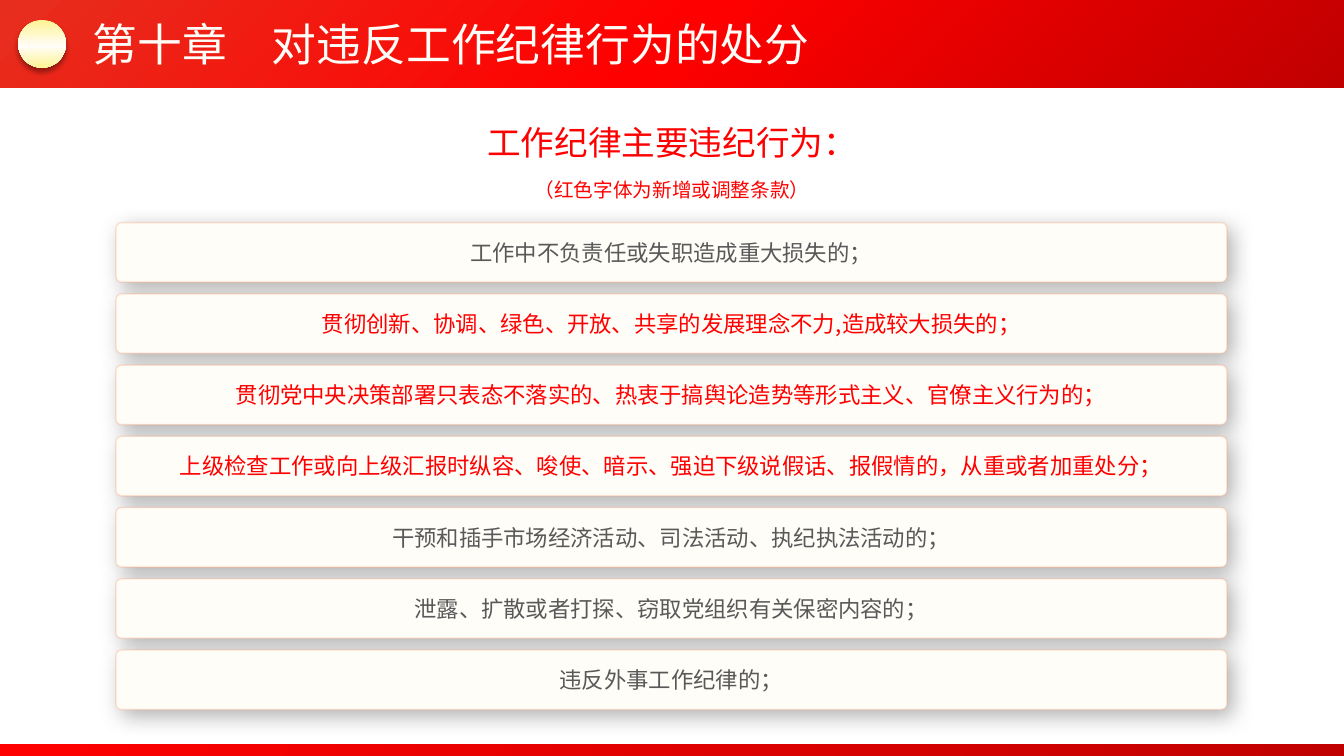
from copy import deepcopy

from lxml import etree
from pptx import Presentation
from pptx.dml.color import RGBColor
from pptx.enum.shapes import MSO_SHAPE
from pptx.enum.text import MSO_ANCHOR, MSO_AUTO_SIZE, PP_ALIGN
from pptx.oxml.ns import qn
from pptx.util import Cm, Pt

RECTANGLE = MSO_SHAPE.RECTANGLE
ROUNDED = MSO_SHAPE.ROUNDED_RECTANGLE
OVAL = MSO_SHAPE.OVAL
LEFT = PP_ALIGN.LEFT
CENTER = PP_ALIGN.CENTER
MIDDLE = MSO_ANCHOR.MIDDLE
NO_AUTOFIT = MSO_AUTO_SIZE.NONE

FONT = "Noto Sans CJK SC"
RED = RGBColor(0xFF, 0x00, 0x00)
DARK_RED = RGBColor(0xC0, 0x00, 0x00)
ORANGE_RED = RGBColor(0xE7, 0x2E, 0x1E)
GOLD = RGBColor(0xFD, 0xF3, 0x94)
CREAM = RGBColor(0xFF, 0xFD, 0xF8)
PEACH = RGBColor(0xFF, 0xA0, 0x75)
GRAY = RGBColor(0x59, 0x59, 0x59)
BLACK = RGBColor(0x00, 0x00, 0x00)

SLIDE_WIDTH = 33.87
SLIDE_HEIGHT = 19.05
CARD_HEIGHT = 1.5

PROVISIONS = [
    ("工作中不负责任或失职造成重大损失的；", GRAY),
    ("贯彻创新、协调、绿色、开放、共享的发展理念不力,造成较大损失的；", RED),
    ("贯彻党中央决策部署只表态不落实的、热衷于搞舆论造势等形式主义、官僚主义行为的；", RED),
    ("上级检查工作或向上级汇报时纵容、唆使、暗示、强迫下级说假话、报假情的，从重或者加重处分；", RED),
    ("干预和插手市场经济活动、司法活动、执纪执法活动的；", GRAY),
    ("泄露、扩散或者打探、窃取党组织有关保密内容的；", GRAY),
    ("违反外事工作纪律的；", GRAY),
]


def write_text(shape, text, size, color, alignment=CENTER, wrap=True):
    frame = shape.text_frame
    frame.auto_size = NO_AUTOFIT
    frame.word_wrap = wrap
    frame.vertical_anchor = MIDDLE
    paragraph = frame.paragraphs[0]
    paragraph.alignment = alignment
    run = paragraph.add_run()
    run.text = text
    run.font.size = Pt(size)
    run.font.color.rgb = color
    run.font.name = FONT
    properties = run._r.get_or_add_rPr()
    etree.SubElement(properties, qn("a:ea"), typeface=FONT)


def add_plain_shape(slide, kind, left, top, width, height):
    shape = slide.shapes.add_shape(kind, Cm(left), Cm(top), Cm(width), Cm(height))
    shape.shadow.inherit = False
    shape.line.fill.background()
    return shape


def fill_gradient(shape, stops, angle):
    shape.fill.gradient()
    shape.fill.gradient_angle = 360 - angle
    stop_list = shape._element.spPr.find(qn("a:gradFill")).find(qn("a:gsLst"))
    while len(stop_list) < len(stops):
        stop_list.append(deepcopy(stop_list[0]))
    for stop, (position, color) in zip(shape.fill.gradient_stops, stops):
        stop.position = position
        stop.color.rgb = color


def add_alpha(color_element, percent):
    etree.SubElement(color_element, qn("a:alpha"), val=str(percent * 1000))


def add_shadow(shape, opacity, blur, distance, angle):
    effects = shape._element.spPr.find(qn("a:effectLst"))
    shadow = etree.SubElement(
        effects, qn("a:outerShdw"), blurRad=str(Pt(blur)), dist=str(Pt(distance)),
        dir=str(angle * 60000), algn="tl", rotWithShape="0")
    add_alpha(etree.SubElement(shadow, qn("a:srgbClr"), val=str(BLACK)), opacity)


def add_header(slide, left, top, width, height):
    band = add_plain_shape(slide, RECTANGLE, left, top, width, height)
    fill_gradient(band, [(0, ORANGE_RED), (0.5, RED), (1, DARK_RED)], 45)

    emblem_size = 1.2
    emblem = add_plain_shape(slide, OVAL, left + 0.46, top + (height - emblem_size) / 2,
                             emblem_size, emblem_size)
    fill_gradient(emblem, [(0, GOLD), (0.55, CREAM), (1, GOLD)], 90)
    add_shadow(emblem, 40, 4, 3, 90)

    title = slide.shapes.title
    title.left, title.top = Cm(left + 2.08), Cm(top + 0.3)
    title.width, title.height = Cm(18.75), Cm(1.62)
    write_text(title, "第十章　对违反工作纪律行为的处分", 32, CREAM, LEFT, wrap=False)
    tree = slide.shapes._spTree
    tree.remove(title._element)
    tree.append(title._element)


def add_heading(slide, left, top, width):
    lines = [
        ("工作纪律主要违纪行为：", 24, 0, 1.27),
        ("（红色字体为新增或调整条款）", 14, 1.4, 0.86),
    ]
    for text, size, offset, height in lines:
        box = slide.shapes.add_textbox(Cm(left), Cm(top + offset), Cm(width), Cm(height))
        write_text(box, text, size, RED)


def add_cards(slide, left, top, width, height):
    pitch = (height - CARD_HEIGHT) / (len(PROVISIONS) - 1)
    for index, (text, color) in enumerate(PROVISIONS):
        card = add_plain_shape(slide, ROUNDED, left, top + index * pitch, width, CARD_HEIGHT)
        card.adjustments[0] = 0.096
        card.fill.solid()
        card.fill.fore_color.rgb = CREAM
        card.line.color.rgb = PEACH
        card.line.width = Pt(1)
        add_alpha(card._element.spPr.find(qn("a:ln")).find(".//" + qn("a:srgbClr")), 30)
        add_shadow(card, 30, 15, 5, 45)
        write_text(card, text, 16, color)


def add_footer(slide, left, top, width, height):
    band = add_plain_shape(slide, RECTANGLE, left, top, width, height)
    fill_gradient(band, [(0, RED), (1, DARK_RED)], 45)


def main():
    presentation = Presentation()
    presentation.slide_width = Cm(SLIDE_WIDTH)
    presentation.slide_height = Cm(SLIDE_HEIGHT)
    slide = presentation.slides.add_slide(presentation.slide_layouts[5])
    add_footer(slide, 0, 18.75, SLIDE_WIDTH, 0.3)
    add_header(slide, 0, 0, SLIDE_WIDTH, 2.21)
    add_cards(slide, 2.92, 5.61, 28, 12.27)
    add_heading(slide, 11.15, 2.95, 11.58)
    presentation.save("out.pptx")


if __name__ == "__main__":
    main()
